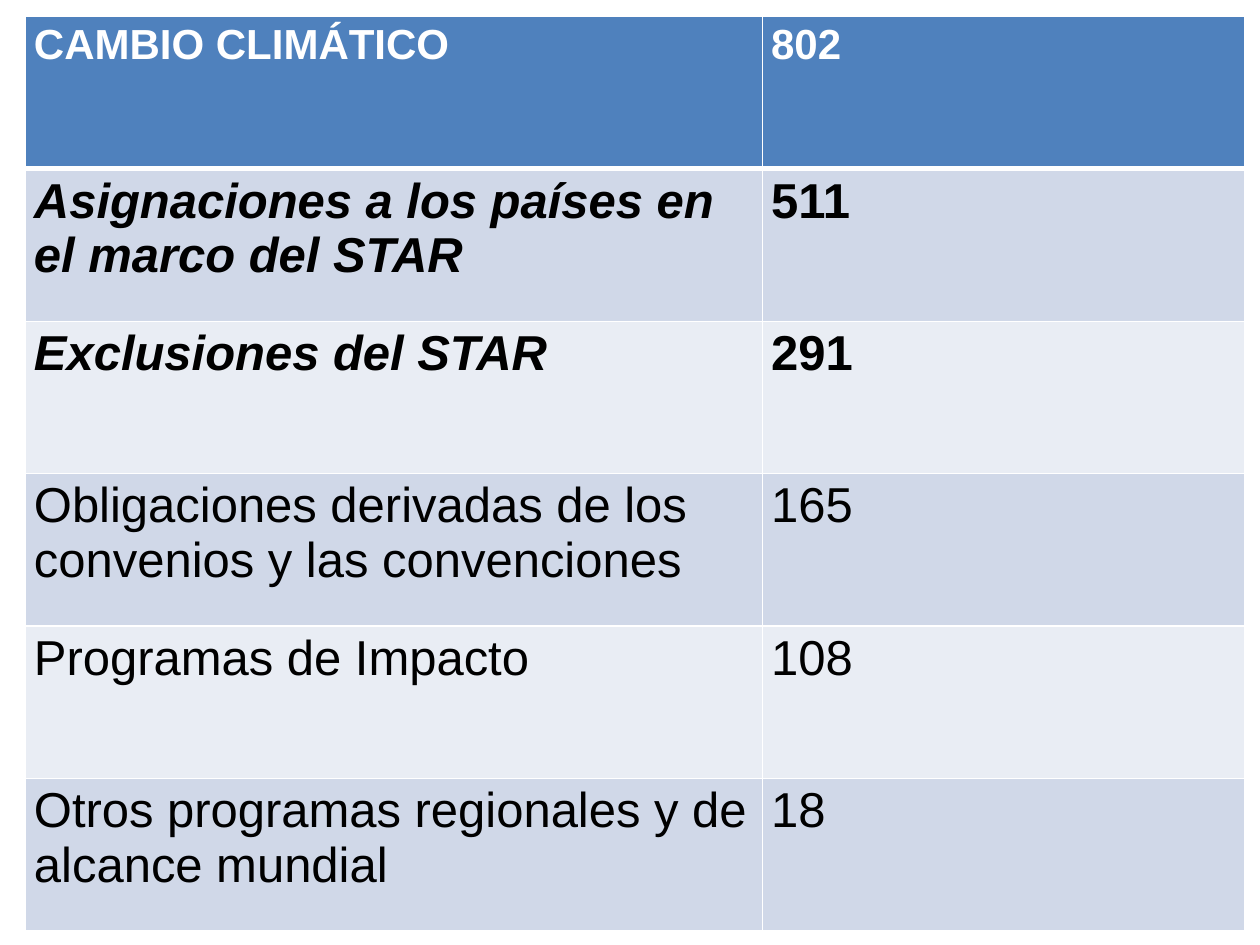
from lxml import etree
from pptx import Presentation
from pptx.dml.color import RGBColor
from pptx.oxml.ns import qn
from pptx.util import Inches, Pt

WHITE, BLACK = "FFFFFF", "000000"
HEADER_FILL = "4F81BD"
BAND_FILLS = ("D0D8E8", "E9EDF4")

# label, amount, bold, italic label
ROWS = [
    ("CAMBIO CLIMÁTICO", "802", True, False),
    ("Asignaciones a los países en el marco del STAR", "511", True, True),
    ("Exclusiones del STAR", "291", True, True),
    ("Obligaciones derivadas de los convenios y las convenciones", "165", False, False),
    ("Programas de Impacto", "108", False, False),
    ("Otros programas regionales y de alcance mundial", "18", False, False),
]
COLUMN_WIDTHS = (5.85, 3.83)
ROW_HEIGHT = 1.21
LEFT, TOP = 0.2, 0.13


def color(value):
    return RGBColor.from_string(value)


def set_borders(cell, top, bottom):
    """Draw white cell borders; top and bottom are widths in points."""
    properties = cell._tc.get_or_add_tcPr()
    widths = {"a:lnL": 1, "a:lnR": 1, "a:lnT": top, "a:lnB": bottom}
    for tag, width in widths.items():
        line = etree.SubElement(properties, qn(tag), w=str(Pt(width)))
        fill = etree.SubElement(line, qn("a:solidFill"))
        etree.SubElement(fill, qn("a:srgbClr"), val=WHITE)


def fill_cell(cell, text, row_index, bold, italic):
    is_header = row_index == 0
    set_borders(cell, top=3 if row_index == 1 else 1, bottom=3 if is_header else 1)
    cell.fill.solid()
    background = HEADER_FILL if is_header else BAND_FILLS[(row_index - 1) % 2]
    cell.fill.fore_color.rgb = color(background)
    cell.margin_left = cell.margin_right = Inches(0.07)
    cell.margin_top = cell.margin_bottom = Inches(0.04)

    run = cell.text_frame.paragraphs[0].add_run()
    run.text = text
    run.font.name = "Arial"
    run.font.size = Pt(24 if is_header else 28)
    run.font.bold = bold
    run.font.italic = italic
    run.font.color.rgb = color(WHITE if is_header else BLACK)


presentation = Presentation()
presentation.slide_width, presentation.slide_height = Inches(10), Inches(7.5)
slide = presentation.slides.add_slide(presentation.slide_layouts[6])

table = slide.shapes.add_table(
    len(ROWS), len(COLUMN_WIDTHS), Inches(LEFT), Inches(TOP),
    Inches(sum(COLUMN_WIDTHS)), Inches(ROW_HEIGHT * len(ROWS)),
).table
for column, width in zip(table.columns, COLUMN_WIDTHS):
    column.width = Inches(width)

for row_index, (label, amount, bold, italic) in enumerate(ROWS):
    table.rows[row_index].height = Inches(ROW_HEIGHT)
    fill_cell(table.cell(row_index, 0), label, row_index, bold, italic)
    fill_cell(table.cell(row_index, 1), amount, row_index, bold, False)

presentation.save("out.pptx")
